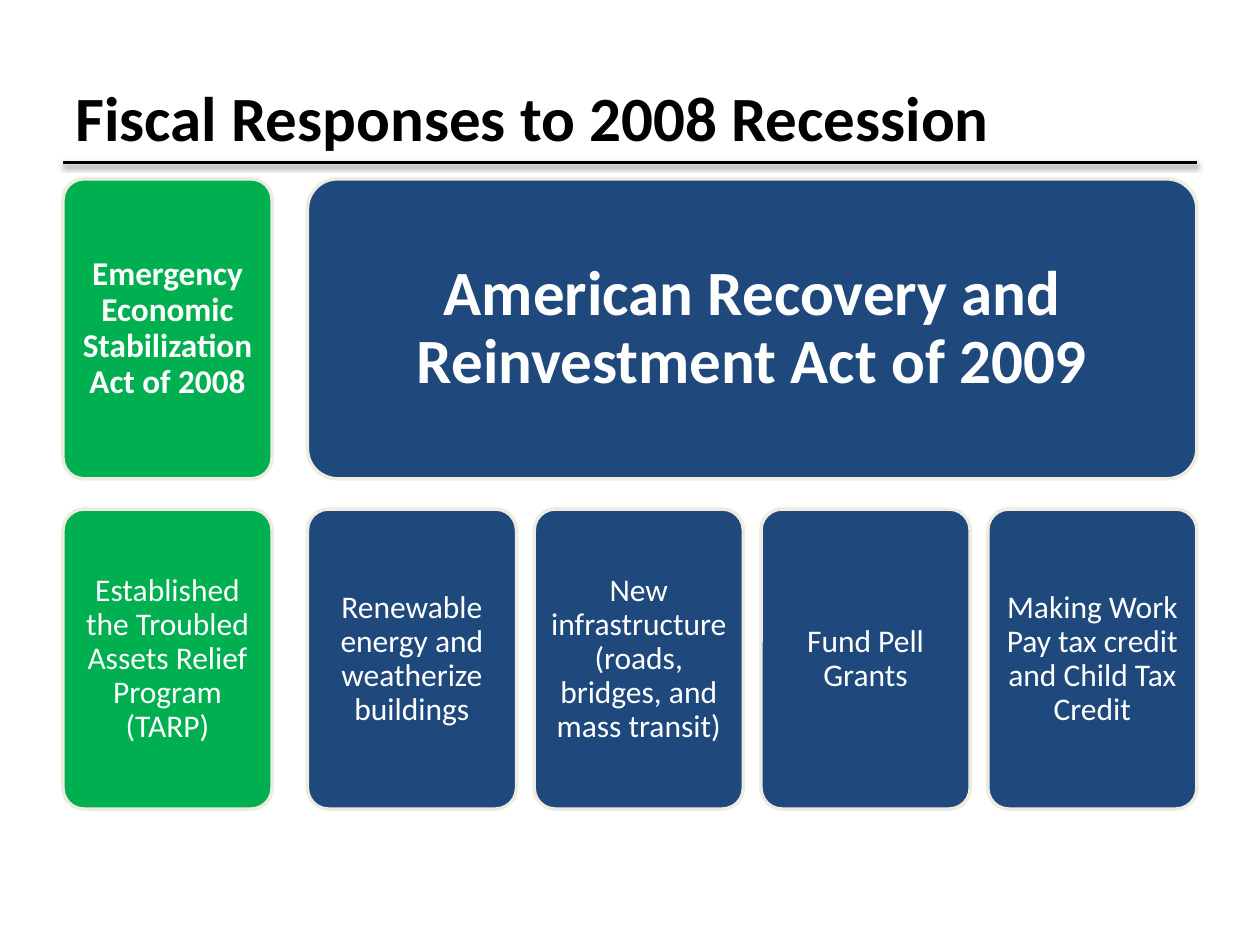
from dataclasses import dataclass

from lxml.etree import SubElement
from pptx import Presentation
from pptx.dml.color import RGBColor
from pptx.enum.shapes import MSO_CONNECTOR, MSO_SHAPE
from pptx.enum.text import MSO_ANCHOR, PP_ALIGN
from pptx.oxml.ns import qn
from pptx.slide import Slide
from pptx.text.text import TextFrame
from pptx.util import Pt

COLORS = {
    "black": "000000",
    "white": "FFFFFF",
    "border": "EEECE1",
    "green": "00B050",
    "blue": "1F497D",
}

LEFT, RIGHT = 36, 684
CARD_W, CARD_H = 119.5, 171.4
ACT_TOP, MEASURE_TOP = 102.2, 290.9
PITCH = 129.6
RECOVERY_LEFT = RIGHT - CARD_W - 3 * PITCH
RULE_Y = 92.9


@dataclass
class Card:
    """A rounded box with centred text."""
    text: str
    left: float
    top: float
    fill: str
    width: float = CARD_W
    size: float = 18
    bold: bool = False
    inset: float = 5


MEASURES = [
    "Renewable energy and weatherize buildings",
    "New infrastructure (roads, bridges, and mass transit)",
    "Fund Pell Grants",
    "Making Work Pay tax credit and Child Tax Credit",
]

CARDS = [
    Card("Emergency Economic Stabilization Act of 2008", LEFT, ACT_TOP, "green",
         size=19, bold=True, inset=5.7),
    Card("Established the Troubled Assets Relief Program (TARP)",
         LEFT, MEASURE_TOP, "green"),
    Card("American Recovery and Reinvestment Act of 2009", RECOVERY_LEFT, ACT_TOP,
         "blue", width=RIGHT - RECOVERY_LEFT, size=36, bold=True, inset=10.8),
    *(Card(text, RECOVERY_LEFT + i * PITCH, MEASURE_TOP, "blue")
      for i, text in enumerate(MEASURES)),
]


def rgb(name: str) -> RGBColor:
    """Return the named colour."""
    return RGBColor.from_string(COLORS[name])


def set_text(tf: TextFrame, text: str, size: float, color: str, bold: bool) -> None:
    """Write one vertically centred paragraph."""
    tf.text = text
    tf.word_wrap = True
    tf.vertical_anchor = MSO_ANCHOR.MIDDLE
    font = tf.paragraphs[0].runs[0].font
    font.name = "Calibri"
    font.size = Pt(size)
    font.bold = bold
    font.color.rgb = rgb(color)


def add_title(s: Slide, text: str) -> None:
    """Add the slide title."""
    sp = s.shapes.add_textbox(Pt(LEFT), Pt(21.6), Pt(RIGHT - LEFT), Pt(90))
    set_text(sp.text_frame, text, 36, "black", True)


def add_rule(s: Slide) -> None:
    """Add the title rule with its soft shadow."""
    line = s.shapes.add_connector(MSO_CONNECTOR.STRAIGHT, Pt(LEFT), Pt(RULE_Y),
                                  Pt(RIGHT), Pt(RULE_Y))
    line.line.color.rgb = rgb("black")
    line.line.width = Pt(2)
    effects = SubElement(line._element.spPr, qn("a:effectLst"))
    shadow = SubElement(effects, qn("a:outerShdw"), blurRad=str(Pt(3.1)),
                        dist=str(Pt(1.6)), dir="5400000", rotWithShape="0")
    tint = SubElement(shadow, qn("a:srgbClr"), val=COLORS["black"])
    SubElement(tint, qn("a:alpha"), val="38000")


def add_card(s: Slide, card: Card) -> None:
    """Add one rounded box."""
    sp = s.shapes.add_shape(MSO_SHAPE.ROUNDED_RECTANGLE, Pt(card.left), Pt(card.top),
                            Pt(card.width), Pt(CARD_H))
    sp.adjustments[0] = 0.1
    sp.shadow.inherit = False
    sp.fill.solid()
    sp.fill.fore_color.rgb = rgb(card.fill)
    sp.line.color.rgb = rgb("border")
    sp.line.width = Pt(2)
    tf = sp.text_frame
    set_text(tf, card.text, card.size, "white", card.bold)
    tf.margin_left = tf.margin_right = Pt(card.inset)
    tf.margin_top = tf.margin_bottom = Pt(card.inset)
    p = tf.paragraphs[0]
    p.alignment = PP_ALIGN.CENTER
    p.line_spacing = 0.9


def main() -> None:
    """Build and save the slide."""
    prs = Presentation()
    prs.slide_width, prs.slide_height = Pt(720), Pt(540)
    s = prs.slides.add_slide(prs.slide_layouts[6])
    add_rule(s)
    add_title(s, "Fiscal Responses to 2008 Recession")
    for card in CARDS:
        add_card(s, card)
    prs.save("out.pptx")


if __name__ == "__main__":
    main()
